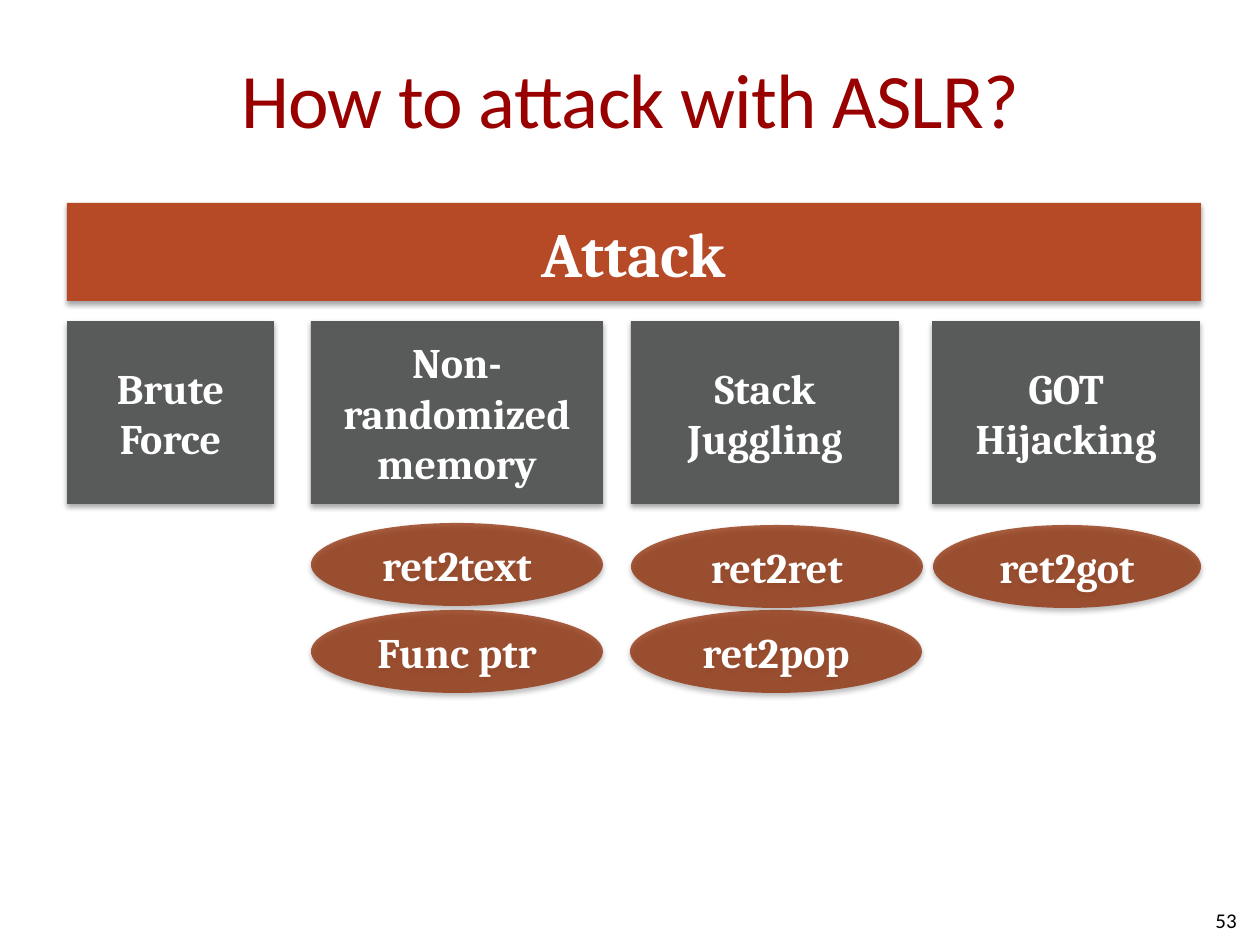
from dataclasses import dataclass

from lxml.etree import SubElement
from pptx import Presentation
from pptx.dml.color import RGBColor
from pptx.enum.shapes import MSO_SHAPE
from pptx.enum.text import MSO_ANCHOR, PP_ALIGN
from pptx.oxml.ns import qn
from pptx.util import Pt

PX = 914400 / 126


@dataclass(frozen=True)
class Theme:
    title: str = "990000"
    banner: str = "B64926"
    category: str = "595A5A"
    technique: str = "8E2800"
    technique_alpha: int = 74
    white: str = "FFFFFF"
    black: str = "000000"
    heading_font: str = "Calibri"
    diagram_font: str = "Cambria"
    title_size: int = 44
    banner_size: int = 36
    label_size: int = 24
    number_size: int = 12


THEME = Theme()
ROW_TOP, ROW_HEIGHT = 321, 183
OVAL_HEIGHT = 83

# label, left, width, ovals as (label, left, top, width)
CATEGORIES = [
    ("Brute Force", 67, 207, []),
    ("Non-randomized memory", 311, 292,
     [("ret2text", 311, 523, 292), ("Func ptr", 311, 610, 292)]),
    ("Stack Juggling", 631, 268,
     [("ret2ret", 631, 525, 292), ("ret2pop", 630, 610, 292)]),
    ("GOT\nHijacking", 932, 268, [("ret2got", 933, 525, 268)]),
]


def px(*values):
    return [round(v * PX) for v in values]


def write(sp, text, size, color, font, align=PP_ALIGN.CENTER, bold=False):
    tf = sp.text_frame
    tf.word_wrap = True
    tf.vertical_anchor = MSO_ANCHOR.MIDDLE
    tf.text = text
    formats = {"name": font, "size": Pt(size), "bold": bold}
    for p in tf.paragraphs:
        p.alignment = align
        for r in p.runs:
            for name, value in formats.items():
                setattr(r.font, name, value)
            r.font.color.rgb = RGBColor.from_string(color)


def add_shadow(sp):
    """Soft shadow straight below the shape."""
    sp.shadow.inherit = False
    effects = sp._element.spPr.find(qn("a:effectLst"))
    shadow = SubElement(effects, qn("a:outerShdw"), blurRad=str(Pt(3.1)),
                        dist=str(Pt(1.8)), dir="5400000", rotWithShape="0")
    color = SubElement(shadow, qn("a:srgbClr"), val=THEME.black)
    SubElement(color, qn("a:alpha"), val="35000")


def add_block(s, kind, box, text, fill, size=THEME.label_size, alpha=100):
    sp = s.shapes.add_shape(kind, *px(*box))
    sp.fill.solid()
    sp.fill.fore_color.rgb = RGBColor.from_string(fill)
    sp.line.fill.background()
    if alpha < 100:
        color = sp._element.spPr.find(qn("a:solidFill"))[0]
        SubElement(color, qn("a:alpha"), val=str(alpha * 1000))
    add_shadow(sp)
    write(sp, text, size, THEME.white, THEME.diagram_font, bold=True)


def add_title(s, text):
    sp = s.shapes.add_textbox(*px(63, 37, 1134, 121))
    write(sp, text, THEME.title_size, THEME.title, THEME.heading_font)
    tf = sp.text_frame
    tf.margin_left = tf.margin_right = 0
    tf.paragraphs[0].runs[0].font._element.set("spc", "-50")


def add_slide_number(s, text):
    sp = s.shapes.add_textbox(*px(955, 895, 294, 50))
    write(sp, text, THEME.number_size, THEME.black, THEME.heading_font,
          PP_ALIGN.RIGHT)


def main():
    prs = Presentation()
    prs.slide_width, prs.slide_height = px(1260, 945)
    s = prs.slides.add_slide(prs.slide_layouts[6])
    add_title(s, "How to attack with ASLR?")
    add_block(s, MSO_SHAPE.RECTANGLE, (67, 203, 1134, 98), "Attack",
              THEME.banner, THEME.banner_size)
    for label, left, width, ovals in CATEGORIES:
        add_block(s, MSO_SHAPE.RECTANGLE, (left, ROW_TOP, width, ROW_HEIGHT),
                  label, THEME.category)
        for name, x, y, w in ovals:
            add_block(s, MSO_SHAPE.OVAL, (x, y, w, OVAL_HEIGHT), name,
                      THEME.technique, alpha=THEME.technique_alpha)
    add_slide_number(s, "53")
    prs.save("out.pptx")


if __name__ == "__main__":
    main()
